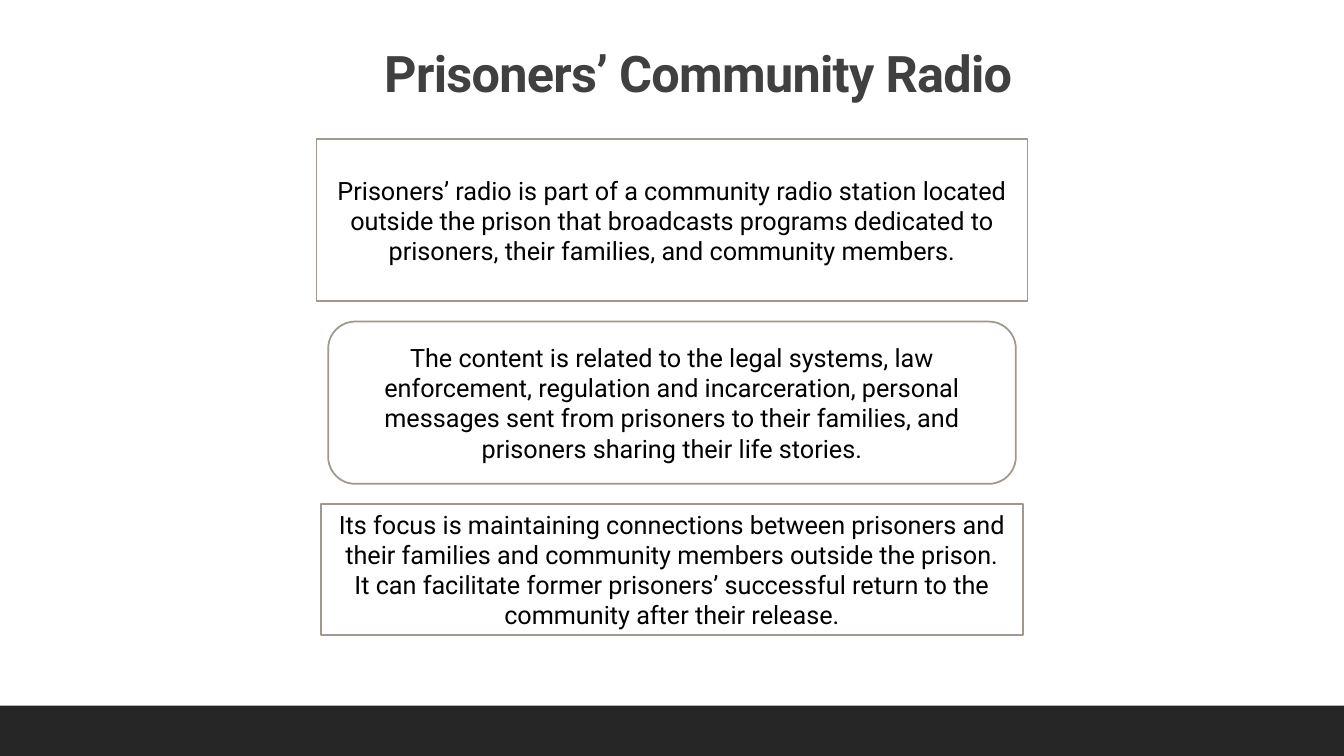
from pptx import Presentation
from pptx.dml.color import RGBColor
from pptx.enum.shapes import MSO_SHAPE
from pptx.enum.text import MSO_ANCHOR, PP_ALIGN
from pptx.util import Inches, Pt

RECT = MSO_SHAPE.RECTANGLE
ROUNDED = MSO_SHAPE.ROUNDED_RECTANGLE
MIDDLE = MSO_ANCHOR.MIDDLE
BOTTOM = MSO_ANCHOR.BOTTOM
CENTER = PP_ALIGN.CENTER

SLIDE_WIDTH, SLIDE_HEIGHT = 13.33, 7.5
FOOTER_HEIGHT = 0.5
STACK_TOP, STACK_GAP = 1.38, 0.2

# Each box: preset shape, width, height, paragraphs
BOXES = [
    (RECT, 7.05, 1.61, [
        "Prisoners’ radio is part of a community radio station located outside "
        "the prison that broadcasts programs dedicated to prisoners, their "
        "families, and community members."]),
    (ROUNDED, 6.82, 1.61, [
        "The content is related to the legal systems, law enforcement, "
        "regulation and incarceration, personal messages sent from prisoners "
        "to their families, and prisoners sharing their life stories."]),
    (RECT, 6.96, 1.3, [
        "Its focus is maintaining connections between prisoners and their "
        "families and community members outside the prison.",
        "It can facilitate former prisoners’ successful return to the "
        "community after their release."]),
]


def color(value):
    return RGBColor.from_string(value)


class RadioSlide:
    FONT = "Roboto"
    TITLE_COLOR = "404040"
    TEXT_COLOR = "000000"
    BOX_FILL = "FFFFFF"
    BOX_LINE = "A0988C"
    FOOTER_FILL = "262626"

    def __init__(self, deck):
        self.page = deck.slides.add_slide(deck.slide_layouts[6])

    def set_text(self, shape, paragraphs, size, text_color, anchor, bold=False):
        frame = shape.text_frame
        frame.word_wrap = True
        frame.vertical_anchor = anchor
        frame.text = "\n".join(paragraphs)
        for para in frame.paragraphs:
            para.alignment = CENTER
            for span in para.runs:
                span.font.name = self.FONT
                span.font.size = Pt(size)
                span.font.bold = bold
                span.font.color.rgb = color(text_color)
        return frame

    def shape(self, kind, left, top, width, height, fill, line=None):
        shape = self.page.shapes.add_shape(
            kind, Inches(left), Inches(top), Inches(width), Inches(height))
        shape.shadow.inherit = False
        shape.fill.solid()
        shape.fill.fore_color.rgb = color(fill)
        if line:
            shape.line.color.rgb = color(line)
            shape.line.width = Pt(1.25)
        else:
            shape.line.fill.background()
        return shape

    def footer(self):
        self.shape(RECT, 0, SLIDE_HEIGHT - FOOTER_HEIGHT, SLIDE_WIDTH,
                   FOOTER_HEIGHT, self.FOOTER_FILL)

    def title(self, text, left, top, width, height):
        box = self.page.shapes.add_textbox(
            Inches(left), Inches(top), Inches(width), Inches(height))
        frame = self.set_text(box, [text], 36, self.TITLE_COLOR, BOTTOM,
                              bold=True)
        para = frame.paragraphs[0]
        para.line_spacing = 0.9
        # Tighten letter spacing by half a point
        para.runs[0]._r.get_or_add_rPr().set("spc", "-50")

    def text_box(self, kind, top, width, height, paragraphs):
        left = (SLIDE_WIDTH - width) / 2
        box = self.shape(kind, left, top, width, height,
                         self.BOX_FILL, self.BOX_LINE)
        self.set_text(box, paragraphs, 18, self.TEXT_COLOR, MIDDLE)


def main():
    deck = Presentation()
    deck.slide_width = Inches(SLIDE_WIDTH)
    deck.slide_height = Inches(SLIDE_HEIGHT)
    slide = RadioSlide(deck)

    # Footer band and title
    slide.footer()
    slide.title("Prisoners’ Community Radio", 1.72, 0.31, 10.41, 0.77)

    # Centred stack of text boxes
    top = STACK_TOP
    for kind, width, height, paragraphs in BOXES:
        slide.text_box(kind, top, width, height, paragraphs)
        top += height + STACK_GAP

    deck.save("out.pptx")


if __name__ == "__main__":
    main()
